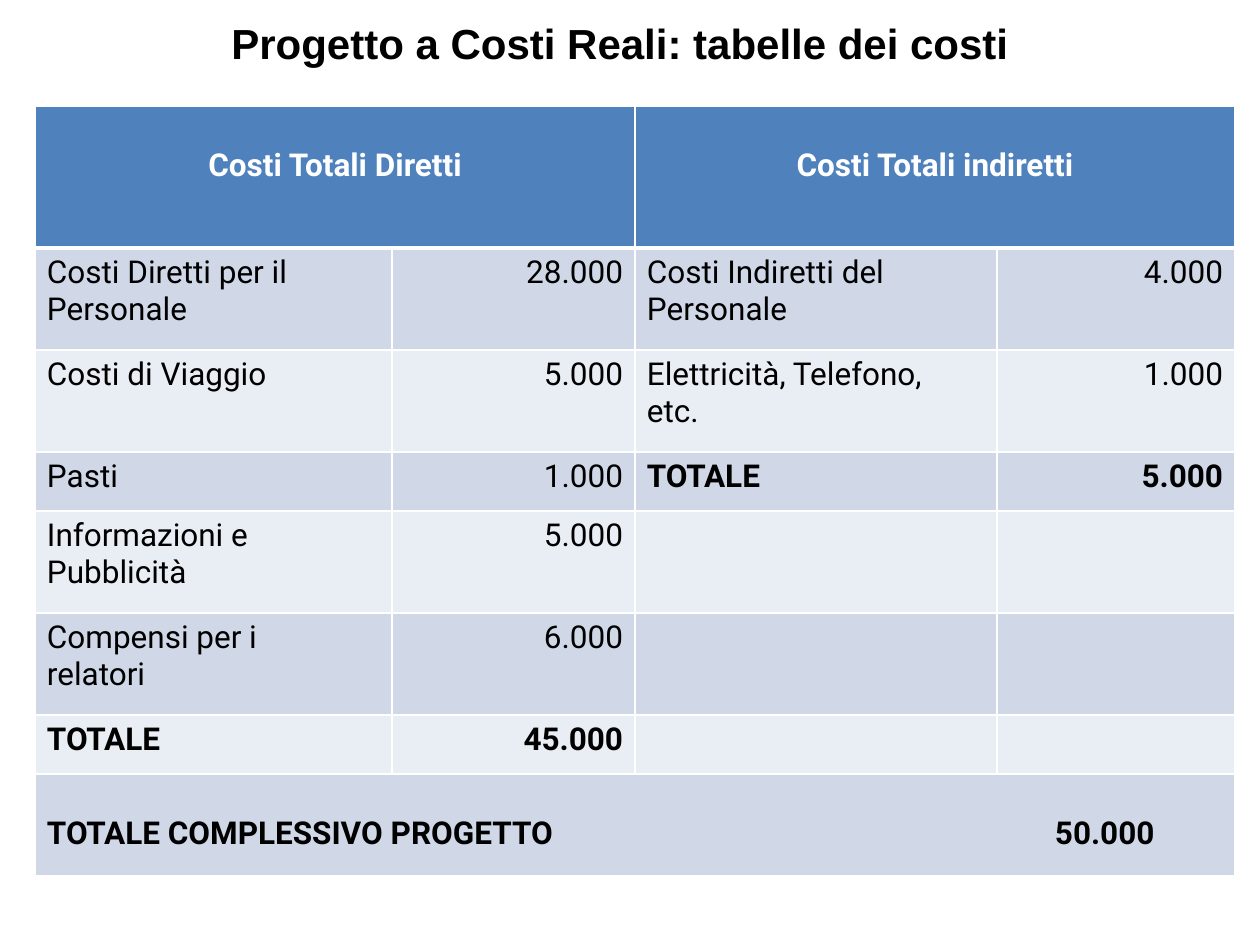
"""Build a slide with the direct and indirect cost tables of a project."""
import lxml.etree
import pptx
import pptx.dml.color
import pptx.enum.text
import pptx.oxml.ns
import pptx.util

COLORS = {"header": "4F81BD", "dark": "D0D8E8", "light": "E9EDF4",
          "white": "FFFFFF", "black": "000000"}
COLUMN_WIDTHS = [357, 243, 362, 238]
ROW_HEIGHTS = [142, 102, 102, 59, 102, 102, 59, 102]
ROWS = [
    ["Costi Totali Diretti", "", "Costi Totali indiretti", ""],
    ["Costi Diretti per il Personale", "28.000", "Costi Indiretti del Personale", "4.000"],
    ["Costi di Viaggio", "5.000", "Elettricità, Telefono, etc.", "1.000"],
    ["Pasti", "1.000", "TOTALE", "5.000"],
    ["Informazioni e Pubblicità", "5.000", "", ""],
    ["Compensi per i relatori", "6.000", "", ""],
    ["TOTALE", "45.000", "", ""],
    ["TOTALE COMPLESSIVO PROGETTO\t50.000", "", "", ""],
]
BOLD_CELLS = {(3, 2), (3, 3), (6, 0), (6, 1), (7, 0)}
LAST = len(ROWS) - 1
ALIGN = pptx.enum.text.PP_ALIGN


def px(length):
    return pptx.util.Emu(round(length * 914400 / 126))


def add_text(para, text, font, size, color, bold):
    span = para.add_run()
    span.text = text
    span.font.name = font
    span.font.size = pptx.util.Pt(size)
    span.font.bold = bold
    span.font.color.rgb = pptx.dml.color.RGBColor.from_string(COLORS[color])


deck = pptx.Presentation()
deck.slide_width, deck.slide_height = px(1260), px(945)
page = deck.slides.add_slide(deck.slide_layouts[5])

title = page.shapes.title
title.left, title.top, title.width, title.height = px(74), px(16), px(1092), px(53)
frame = title.text_frame
frame.auto_size = pptx.enum.text.MSO_AUTO_SIZE.NONE
frame.vertical_anchor = pptx.enum.text.MSO_ANCHOR.MIDDLE
frame.margin_left = frame.margin_right = frame.margin_bottom = 0
frame.margin_top = px(1)
para = frame.paragraphs[0]
para.alignment = ALIGN.CENTER
para.space_before = pptx.util.Pt(1)
add_text(para, "Progetto a Costi Reali: tabelle dei costi", "Arial", 24, "black", True)

table = page.shapes.add_table(
    len(ROWS), len(COLUMN_WIDTHS), px(35), px(106),
    px(sum(COLUMN_WIDTHS)), px(sum(ROW_HEIGHTS))).table
for column, width in zip(table.columns, COLUMN_WIDTHS):
    column.width = px(width)
for row, height in zip(table.rows, ROW_HEIGHTS):
    row.height = px(height)
table.cell(0, 0).merge(table.cell(0, 1))
table.cell(0, 2).merge(table.cell(0, 3))
table.cell(LAST, 0).merge(table.cell(LAST, 3))

for r, texts in enumerate(ROWS):
    for c, text in enumerate(texts):
        cell = table.cell(r, c)
        is_header, is_amount = r == 0, c % 2 == 1
        cell.margin_left = px(0 if is_amount else 12)
        cell.margin_right = px(12 if is_amount else 63)
        cell.margin_top = px(41 if r in (0, LAST) else 6)
        cell.margin_bottom = 0
        if is_header:
            cell.margin_left = cell.margin_right = 0
        if r == LAST:
            cell.margin_right = 0

        properties = cell._tc.get_or_add_tcPr()
        for side in ("L", "R", "T", "B"):
            is_thick = (r, side) in ((0, "B"), (1, "T"))
            line = lxml.etree.SubElement(properties, pptx.oxml.ns.qn(f"a:ln{side}"))
            line.set("w", str(pptx.util.Pt(3 if is_thick else 1)))
            fill = lxml.etree.SubElement(line, pptx.oxml.ns.qn("a:solidFill"))
            lxml.etree.SubElement(fill, pptx.oxml.ns.qn("a:srgbClr")).set("val", COLORS["white"])
        cell.fill.solid()
        shade = "header" if is_header else ("dark" if r % 2 else "light")
        cell.fill.fore_color.rgb = pptx.dml.color.RGBColor.from_string(COLORS[shade])

        if text:
            para = cell.text_frame.paragraphs[0]
            para.alignment = ALIGN.CENTER if is_header else ALIGN.RIGHT if is_amount else ALIGN.LEFT
            add_text(para, text, "Roboto", 18, "white" if is_header else "black",
                     is_header or (r, c) in BOLD_CELLS)

total_format = table.cell(LAST, 0).text_frame.paragraphs[0]._p.get_or_add_pPr()
tabs = lxml.etree.SubElement(total_format, pptx.oxml.ns.qn("a:tabLst"))
tab = lxml.etree.SubElement(tabs, pptx.oxml.ns.qn("a:tab"))
tab.set("pos", str(px(1008)))
tab.set("algn", "l")

deck.save("out.pptx")
